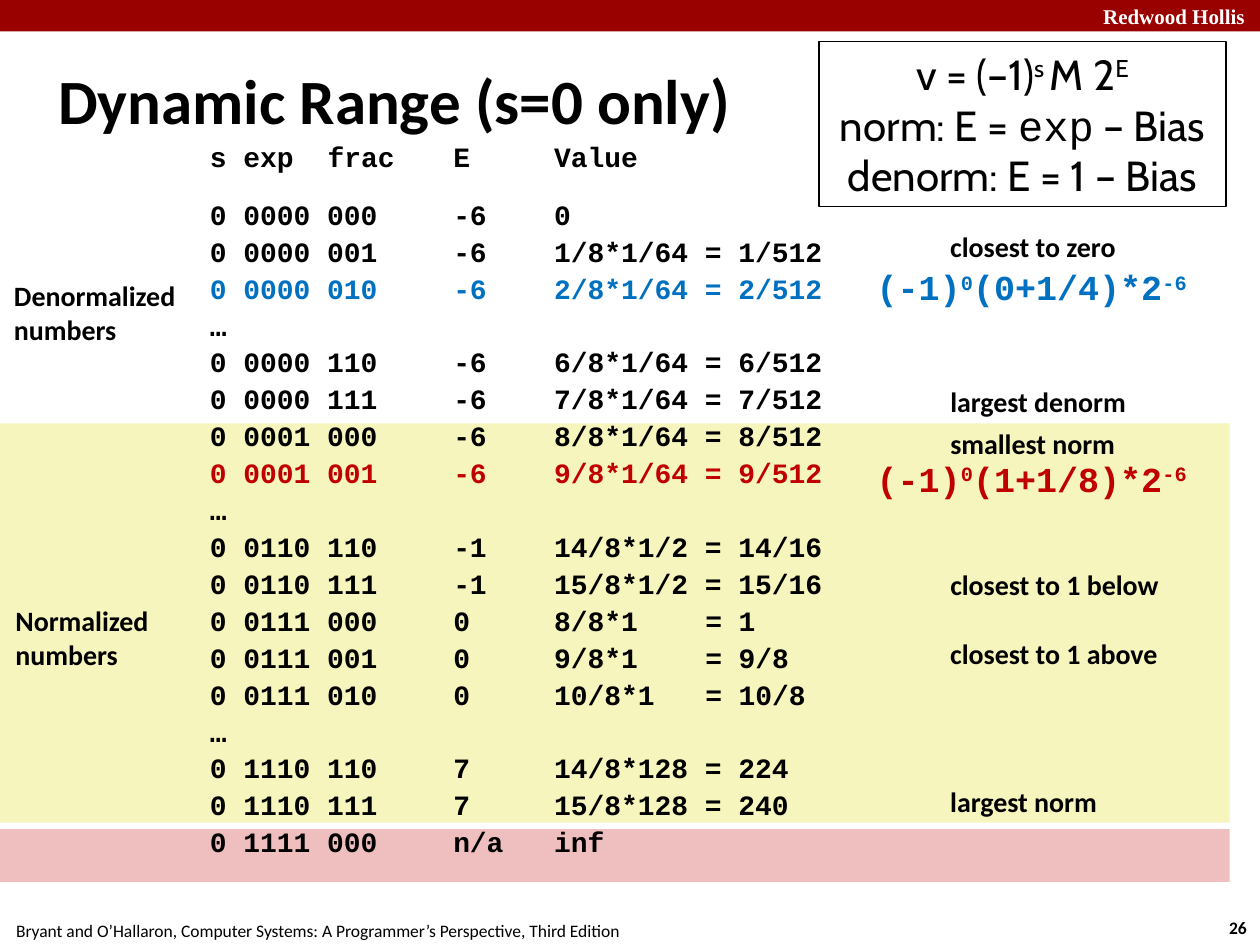
from pptx import Presentation
from pptx.dml.color import RGBColor
from pptx.enum.shapes import MSO_SHAPE
from pptx.enum.text import MSO_ANCHOR, MSO_AUTO_SIZE, PP_ALIGN
from pptx.oxml.ns import qn
from pptx.util import Pt
from lxml.etree import SubElement

COLORS = {"black": "000000", "white": "FFFFFF", "banner": "990000", "blue": "0070C0",
          "red": "C00000", "norm": "F6F5BD", "special": "EFBFBF"}

TITLE = "Dynamic Range (s=0 only)"
ROWS = [
    "s exp\tfrac\tE\tValue",
    "0 0000 000\t-6\t0",
    "0 0000 001\t-6\t1/8*1/64 = 1/512",
    "0 0000 010\t-6\t2/8*1/64 = 2/512",
    "…",
    "0 0000 110\t-6\t6/8*1/64 = 6/512",
    "0 0000 111\t-6\t7/8*1/64 = 7/512",
    "0 0001 000\t-6\t8/8*1/64 = 8/512",
    "0 0001 001\t-6\t9/8*1/64 = 9/512",
    "…",
    "0 0110 110\t-1\t14/8*1/2 = 14/16",
    "0 0110 111\t-1\t15/8*1/2 = 15/16",
    "0 0111 000\t0\t8/8*1\t= 1",
    "0 0111 001\t0\t9/8*1\t= 9/8",
    "0 0111 010\t0\t10/8*1\t= 10/8",
    "…",
    "0 1110 110\t7\t14/8*128 = 224",
    "0 1110 111\t7\t15/8*128 = 240",
    "0 1111 000\tn/a\tinf",
]
ROW_COLORS = {3: "blue", 8: "red"}
TAB_STOPS = (67.2, 139, 196.6, 283)  # frac, E, Value, equals sign

# left, top, width, height, color
BANDS = [
    (0, 0, 720.7, 18, "banner"),
    (0, 473.8, 702.7, 30.2, "special"),
    (0, 241.9, 702.7, 228.2, "norm"),
]
# left, top, width, lines
LABELS = [
    (540, 128.2, 119.5, ["closest to zero"]),
    (540, 216.7, 123.1, ["largest denorm"]),
    (540, 240.5, 115.9, ["smallest norm"]),
    (540, 321.1, 145.4, ["closest to 1 below"]),
    (540, 360.7, 146.2, ["closest to 1 above"]),
    (540, 445, 103.7, ["largest norm"]),
    (5, 156.2, 111.6, ["Denormalized", "numbers"]),
    (5.8, 342, 92.9, ["Normalized", "numbers"]),
]
# top, color, significand
EXAMPLES = [(148.3, "blue", "(0+1/4)*2"), (257.8, "red", "(1+1/8)*2")]
# Each line holds (text, font, superscript percent)
FORMULAS = [
    [("v = (–1)", "Cabin", 0), ("s ", "Cabin", 32), ("M 2", "Cabin", 0), ("E", "Cabin", 32)],
    [("norm: E = ", "Cabin", 0), ("exp", "Courier New", 0), (" – Bias", "Cabin", 0)],
    [("denorm: E = 1 – Bias", "Cabin", 0)],
]
# left, top, width, height, text, font, size, color, bold, alignment
FOOTERS = [
    (694.1, 520.6, 26.6, 19.4, "26", "Calibri", 10, "black", True, PP_ALIGN.CENTER),
    (-1.4, 522, 365.8, 19.4,
     "Bryant and O’Hallaron, Computer Systems: A Programmer’s Perspective, Third Edition",
     "Calibri", 10, "black", False, PP_ALIGN.CENTER),
    (618.5, -1.4, 100, 21.6, "Redwood Hollis", "Times New Roman", 12, "white", True,
     PP_ALIGN.RIGHT),
]


def rgb(name):
    return RGBColor.from_string(COLORS[name])


def add_span(para, text, font, size, color="black", bold=False, raised=0):
    """Add one run; raised is the superscript offset in percent."""
    span = para.add_run()
    span.text = text
    span.font.name, span.font.size, span.font.bold = font, Pt(size), bold
    span.font.color.rgb = rgb(color)
    if raised:
        span.font._element.set("baseline", str(raised * 1000))


def set_insets(frame, inset):
    frame.margin_left = frame.margin_right = Pt(inset)
    frame.margin_top = frame.margin_bottom = Pt(inset)


def paragraphs(frame, count):
    """Return count paragraphs, the first being the one already there."""
    return [frame.paragraphs[0]] + [frame.add_paragraph() for _ in range(count - 1)]


def add_frame(page, left, top, width, height, inset=None, wrap=False):
    box = page.shapes.add_textbox(Pt(left), Pt(top), Pt(width), Pt(height))
    frame = box.text_frame
    frame.word_wrap = wrap
    if inset is not None:
        set_insets(frame, inset)
    return frame


def add_rectangle(page, left, top, width, height):
    box = page.shapes.add_shape(MSO_SHAPE.RECTANGLE, Pt(left), Pt(top), Pt(width), Pt(height))
    box.shadow.inherit = False
    return box


def add_bands(page):
    for *place, color in BANDS:
        band = add_rectangle(page, *place)
        band.fill.solid()
        band.fill.fore_color.rgb = rgb(color)
        band.line.fill.background()


def set_title(page):
    title = page.shapes.title
    title.left, title.top, title.width, title.height = Pt(30.2), Pt(20.2), Pt(660), Pt(72.7)
    frame = title.text_frame
    frame.vertical_anchor = MSO_ANCHOR.MIDDLE
    set_insets(frame, 3)
    para = frame.paragraphs[0]
    para.alignment = PP_ALIGN.LEFT
    add_span(para, TITLE, "Calibri", 36, bold=True)


def add_value_rows(page):
    frame = add_frame(page, 120, 77.8, 365.8, 437.8, inset=0, wrap=True)
    for index, para in enumerate(paragraphs(frame, len(ROWS))):
        para.line_spacing = 1.1
        para.space_before = Pt(12 if index == 1 else 0)
        tabs = SubElement(para._p.get_or_add_pPr(), qn("a:tabLst"))
        for stop in TAB_STOPS:
            SubElement(tabs, qn("a:tab"), pos=str(int(Pt(stop))), algn="l")
        add_span(para, ROWS[index], "Courier New", 16, ROW_COLORS.get(index, "black"), True)


def add_labels(page):
    for left, top, width, lines in LABELS:
        frame = add_frame(page, left, top, width, 5.8 + 19.5 * len(lines), inset=3)
        for para, line in zip(paragraphs(frame, len(lines)), lines):
            add_span(para, line, "Calibri", 16, bold=True)


def add_formulas(page):
    box = add_rectangle(page, 468, 23.8, 232.6, 94.3)
    box.fill.background()
    box.line.color.rgb = rgb("black")
    box.line.width = Pt(0.75)
    frame = box.text_frame
    frame.word_wrap = True
    frame.auto_size = MSO_AUTO_SIZE.SHAPE_TO_FIT_TEXT
    for para, spans in zip(paragraphs(frame, len(FORMULAS)), FORMULAS):
        para.alignment = PP_ALIGN.CENTER
        for text, font, raised in spans:
            add_span(para, text, font, 24, raised=raised)


def add_examples(page):
    for top, color, significand in EXAMPLES:
        para = add_frame(page, 493.9, top, 196.6, 31.7).paragraphs[0]
        for text, raised in (("(-1)", 0), ("0", 30), (significand, 0), ("-6", 30)):
            add_span(para, text, "Courier New", 20, color, True, raised)


def add_footers(page):
    for left, top, width, height, text, font, size, color, bold, alignment in FOOTERS:
        para = add_frame(page, left, top, width, height).paragraphs[0]
        para.alignment = alignment
        add_span(para, text, font, size, color, bold)


def main():
    deck = Presentation()
    deck.slide_width, deck.slide_height = Pt(720), Pt(540)
    page = deck.slides.add_slide(deck.slide_layouts[5])
    add_bands(page)
    set_title(page)
    add_value_rows(page)
    add_labels(page)
    add_formulas(page)
    add_examples(page)
    add_footers(page)
    deck.save("out.pptx")


if __name__ == "__main__":
    main()
